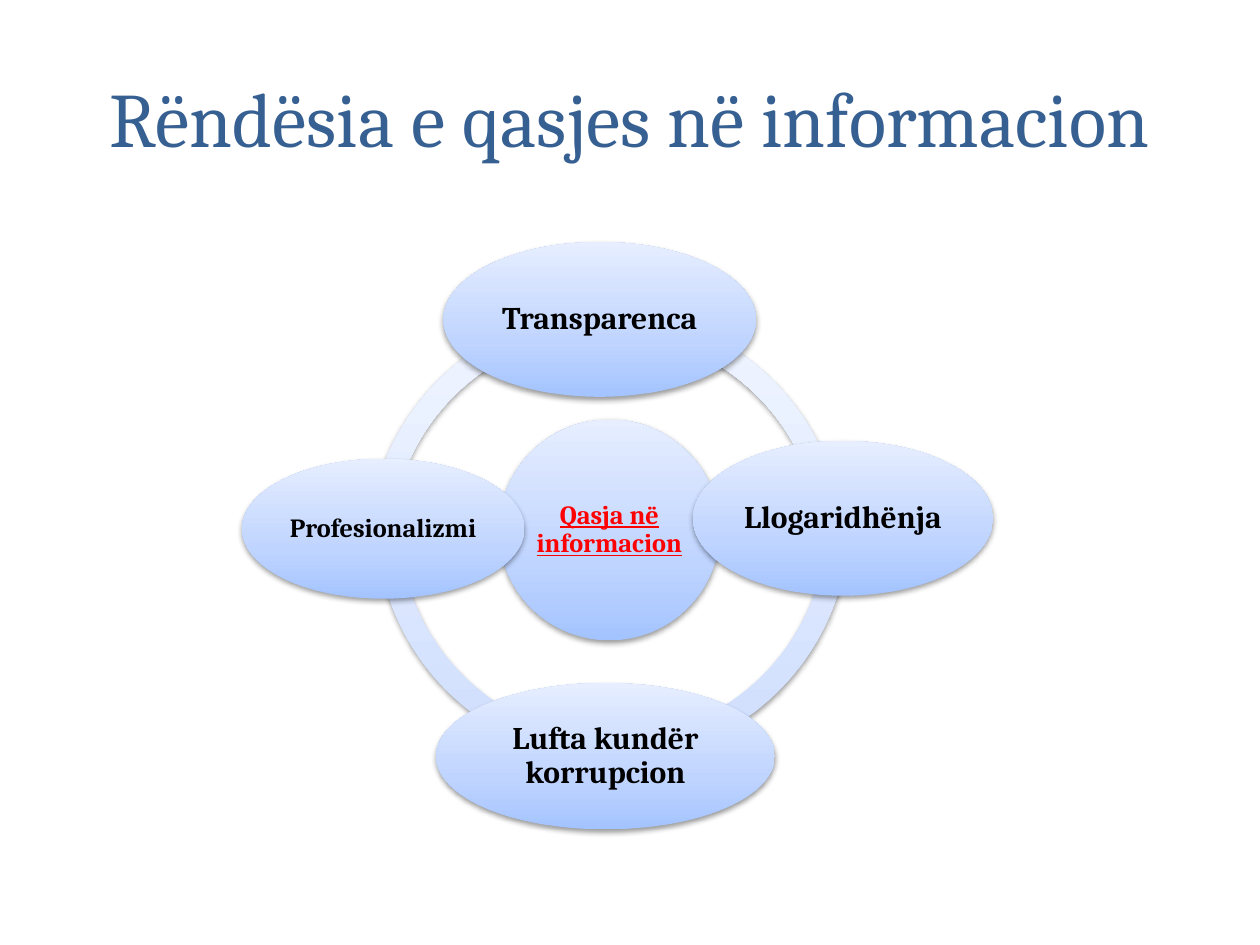
from copy import deepcopy
from lxml.etree import SubElement
from pptx import Presentation
from pptx.dml.color import RGBColor
from pptx.enum.shapes import MSO_SHAPE
from pptx.enum.text import MSO_ANCHOR, PP_ALIGN
from pptx.oxml.ns import qn
from pptx.util import Cm, Pt

FONT = "Cambria"
TITLE_BLUE = RGBColor(0x37, 0x60, 0x92)
BLACK = RGBColor(0x00, 0x00, 0x00)
RED = RGBColor(0xFF, 0x00, 0x00)
RING_COLORS = [RGBColor(0xCD, 0xDD, 0xFE), RGBColor(0xDB, 0xE6, 0xFE), RGBColor(0xF0, 0xF5, 0xFF)]
OVAL_COLORS = [RGBColor(0xA4, 0xC4, 0xFF), RGBColor(0xBF, 0xD4, 0xFF), RGBColor(0xE6, 0xEE, 0xFF)]
STOP_POSITIONS = [0, 0.35, 1]


def add_glossy_shape(kind, left, top, width, height, colors):
    shape = page.shapes.add_shape(kind, Cm(left), Cm(top), Cm(width), Cm(height))
    shape.line.fill.background()
    shape.fill.gradient()
    shape.fill.gradient_angle = 90
    properties = shape.element.spPr
    stop_list = properties.find(qn("a:gradFill")).find(qn("a:gsLst"))
    stop_list.insert(1, deepcopy(stop_list[0]))
    for stop, color, position in zip(shape.fill.gradient_stops, colors, STOP_POSITIONS):
        stop.color.rgb = color
        stop.position = position
    shape.shadow.inherit = False
    shadow = SubElement(properties.find(qn("a:effectLst")), qn("a:outerShdw"),
                        blurRad="40000", dist="20000", dir="5400000", rotWithShape="0")
    shadow_color = SubElement(shadow, qn("a:srgbClr"), val="000000")
    SubElement(shadow_color, qn("a:alpha"), val="38000")
    return shape


def add_text(frame, text, size, color):
    frame.word_wrap = True
    frame.vertical_anchor = MSO_ANCHOR.MIDDLE
    para = frame.paragraphs[0]
    para.alignment = PP_ALIGN.CENTER
    span = para.add_run()
    span.text = text
    span.font.name = FONT
    span.font.size = Pt(size)
    span.font.color.rgb = color
    return para, span


deck = Presentation()
deck.slide_width = Cm(25.4)
deck.slide_height = Cm(19.05)
page = deck.slides.add_slide(deck.slide_layouts[5])

title = page.shapes.title
title.left, title.top, title.width, title.height = Cm(1.27), Cm(0.76), Cm(22.86), Cm(3.18)
add_text(title.text_frame, "Rëndësia e qasjes në informacion", 44, TITLE_BLUE)

RING_SIZE = 9.68
ring_arcs = [
    (7.42, 6.25, 111.5, 159.66),
    (7.59, 5.66, 55.55, 106.89),
    (7.44, 5.66, 215.6, 54.4),
    (7.32, 6.25, 160.28, 210.91),
]
for left, top, start, end in ring_arcs:
    arc = add_glossy_shape(MSO_SHAPE.BLOCK_ARC, left, top, RING_SIZE, RING_SIZE, RING_COLORS)
    for index, value in enumerate((start, end, 0.046)):
        arc.adjustments[index] = value

ovals = [
    ("Qasja në informacion", 10.06, 8.46, 4.45, 4.45, 15, RED),
    ("Transparenca", 8.94, 4.88, 6.3, 3.12, 18, BLACK),
    ("Llogaridhënja", 13.97, 8.89, 6.05, 3.12, 18, BLACK),
    ("Lufta kundër korrupcion", 8.79, 13.77, 6.83, 2.95, 18, BLACK),
    ("Profesionalizmi", 4.88, 9.25, 5.69, 2.82, 15, BLACK),
]
for text, left, top, width, height, size, color in ovals:
    oval = add_glossy_shape(MSO_SHAPE.OVAL, left, top, width, height, OVAL_COLORS)
    frame = oval.text_frame
    frame.margin_left = frame.margin_right = frame.margin_top = frame.margin_bottom = Cm(0.06)
    para, span = add_text(frame, text, size, color)
    para.line_spacing = 0.9
    span.font.bold = True
    span.font.underline = color == RED

deck.save("out.pptx")
